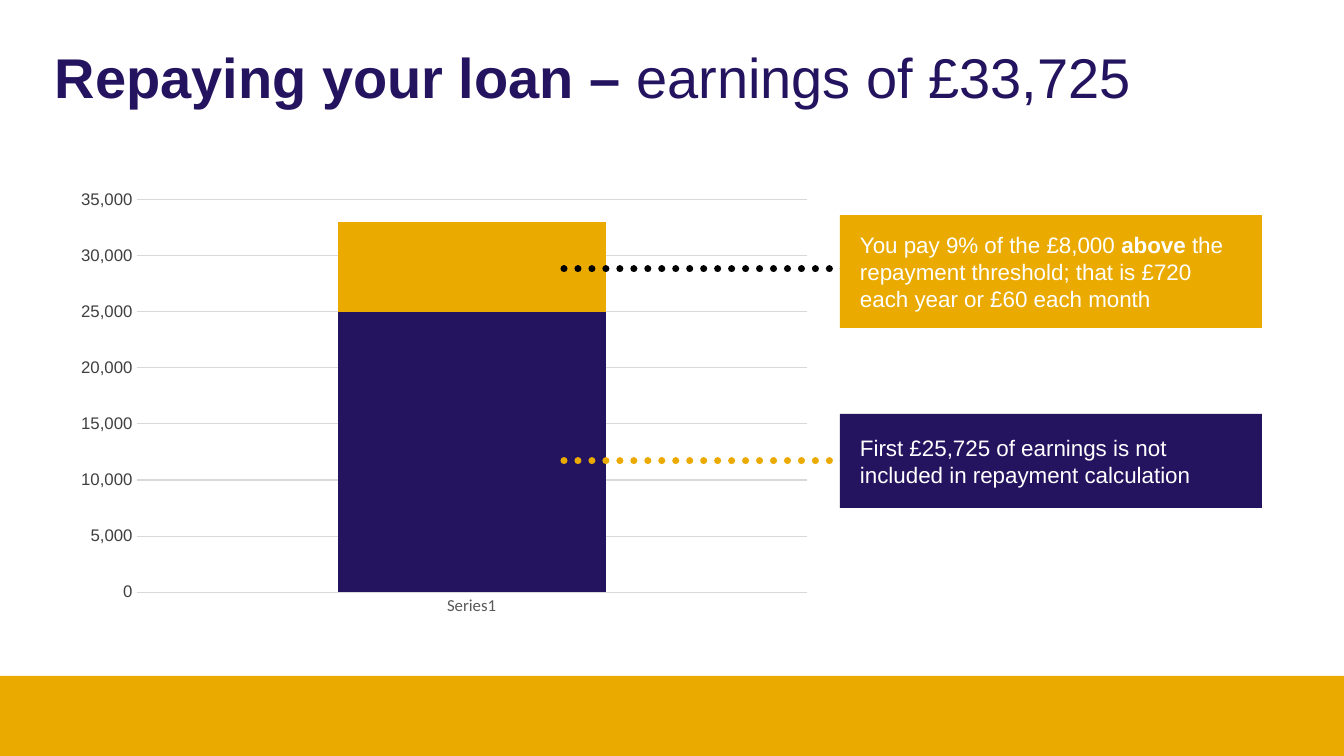
import pptx
import pptx.chart.data
import pptx.dml.color
import pptx.enum.chart
import pptx.enum.dml
import pptx.enum.shapes
import pptx.enum.text
import pptx.util
import lxml.etree

PX = 914400 / 100.8
COLOURS = {"navy": "24135F", "gold": "EAAA00", "white": "FFFFFF", "black": "000000",
           "grid": "D9D9D9", "category": "595959", "value": "404040"}


def px(*lengths):
    return [pptx.util.Emu(round(length * PX)) for length in lengths]


def colour(name):
    return pptx.dml.color.RGBColor.from_string(COLOURS[name])


deck = pptx.Presentation()
deck.slide_width, deck.slide_height = px(1344, 756)
page = deck.slides.add_slide(deck.slide_layouts[6])

# Title
title = page.shapes.add_textbox(*px(45, 48, 1159, 64))
title.text_frame.word_wrap = True
title.text_frame.vertical_anchor = pptx.enum.text.MSO_ANCHOR.MIDDLE
para = title.text_frame.paragraphs[0]
para.line_spacing = 0.9
para.font.name = "Arial"
para.font.size = pptx.util.Pt(40)
para.font.color.rgb = colour("navy")
for words, bold in [("Repaying your loan – ", True), ("earnings of £33,725", False)]:
    span = para.add_run()
    span.text = words
    span.font.bold = bold

# Stacked earnings chart
earnings = pptx.chart.data.CategoryChartData(number_format="#,##0")
earnings.categories = ["Series1"]
earnings.add_series("Series 1", [25000])
earnings.add_series("Series 2", [8000])
chart = page.shapes.add_chart(pptx.enum.chart.XL_CHART_TYPE.COLUMN_STACKED,
                              *px(66, 182, 756, 443), earnings).chart
chart.has_title = False
chart.has_legend = False
chart.font.name = "Calibri"
chart.font.size = pptx.util.Pt(10)
chart.font.color.rgb = colour("black")
plot = chart.plots[0]
plot.gap_width = 150
plot.overlap = 100
plot.vary_by_categories = False
for series, fill in zip(plot.series, ["navy", "gold"]):
    series.format.fill.solid()
    series.format.fill.fore_color.rgb = colour(fill)

# Chart axes
for axis, font, ink in [(chart.category_axis, "Calibri", "category"),
                        (chart.value_axis, "Arial", "value")]:
    axis.major_tick_mark = pptx.enum.chart.XL_TICK_MARK.NONE
    axis.minor_tick_mark = pptx.enum.chart.XL_TICK_MARK.NONE
    axis.tick_labels.font.name = font
    axis.tick_labels.font.size = pptx.util.Pt(12)
    axis.tick_labels.font.color.rgb = colour(ink)
chart.value_axis.minimum_scale = 0
chart.value_axis.maximum_scale = 35000
chart.value_axis.major_unit = 5000
chart.value_axis.tick_labels.number_format = "#,##0"
chart.value_axis.tick_labels.number_format_is_linked = False
chart.value_axis.format.line.fill.background()
for line in [chart.category_axis.format.line, chart.value_axis.major_gridlines.format.line]:
    line.color.rgb = colour("grid")
    line.width = pptx.util.Pt(0.75)

# Footer band
band = page.shapes.add_shape(pptx.enum.shapes.MSO_SHAPE.RECTANGLE, *px(0, 676, 1344, 80))
band.shadow.inherit = False
band.fill.solid()
band.fill.fore_color.rgb = colour("gold")
band.line.fill.background()

# Callouts, each with a dotted leader
callouts = [
    (269, "black", 215, 113, 16, "gold",
     [("You pay 9% of the £8,000 ", False), ("above", True),
      (" the repayment threshold; that is £720 each year or £60 each month", False)]),
    (461, "gold", 414, 94, 20, "navy",
     [("First £25,725 of earnings is not included in repayment calculation", False)]),
]
for leader_y, leader_colour, top, height, inset, fill, spans in callouts:
    leader = page.shapes.add_connector(pptx.enum.shapes.MSO_CONNECTOR.STRAIGHT,
                                       *px(564, leader_y, 846, leader_y))
    leader.line.color.rgb = colour(leader_colour)
    leader.line.width = pptx.util.Pt(5)
    leader.line.dash_style = pptx.enum.dml.MSO_LINE.ROUND_DOT
    leader.line._get_or_add_ln().set("cap", "rnd")
    lxml.etree.SubElement(leader._element.spPr, pptx.oxml.ns.qn("a:effectLst"))

    box = page.shapes.add_shape(pptx.enum.shapes.MSO_SHAPE.RECTANGLE, *px(840, top, 422, height))
    box.shadow.inherit = False
    box.fill.solid()
    box.fill.fore_color.rgb = colour(fill)
    box.line.fill.background()
    frame = box.text_frame
    frame.word_wrap = True
    frame.auto_size = pptx.enum.text.MSO_AUTO_SIZE.SHAPE_TO_FIT_TEXT
    frame.vertical_anchor = pptx.enum.text.MSO_ANCHOR.MIDDLE
    frame.margin_left, frame.margin_right = px(20, 20)
    frame.margin_top, frame.margin_bottom = px(inset, inset)
    para = frame.paragraphs[0]
    para.alignment = pptx.enum.text.PP_ALIGN.LEFT
    para.font.name = "Arial"
    para.font.size = pptx.util.Pt(16)
    para.font.color.rgb = colour("white")
    for words, bold in spans:
        span = para.add_run()
        span.text = words
        span.font.bold = bold

deck.save("out.pptx")
